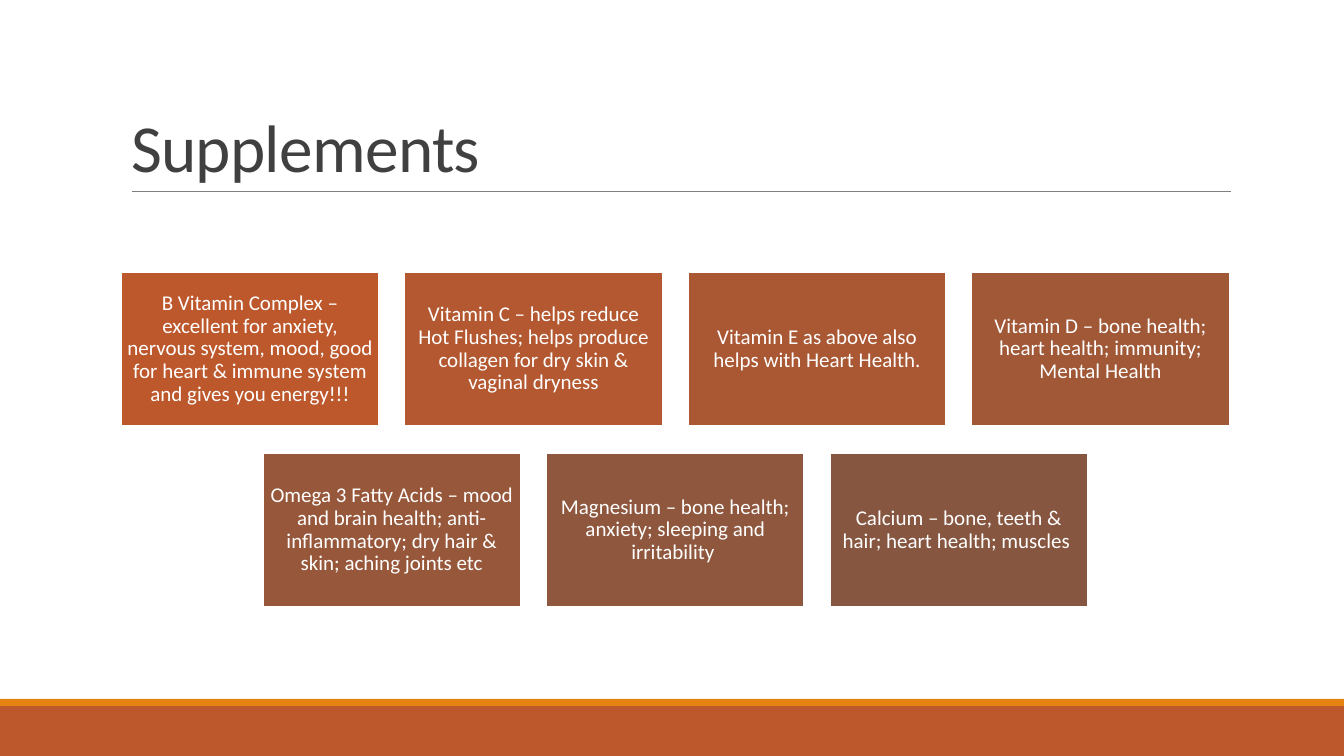
from pptx import Presentation
from pptx.dml.color import RGBColor
from pptx.enum.shapes import MSO_CONNECTOR, MSO_SHAPE
from pptx.enum.text import MSO_ANCHOR, MSO_AUTO_SIZE, PP_ALIGN
from pptx.oxml.ns import qn
from pptx.util import Pt
from lxml import etree

RECT = MSO_SHAPE.RECTANGLE
STRAIGHT = MSO_CONNECTOR.STRAIGHT
LEFT, CENTER = PP_ALIGN.LEFT, PP_ALIGN.CENTER
MIDDLE, BOTTOM = MSO_ANCHOR.MIDDLE, MSO_ANCHOR.BOTTOM
NO_FIT = MSO_AUTO_SIZE.NONE

WHITE = RGBColor(0xFF, 0xFF, 0xFF)
DARK = RGBColor(0x40, 0x40, 0x40)
GREY = RGBColor(0x80, 0x80, 0x80)
RUST = RGBColor(0xBD, 0x58, 0x2C)
ORANGE = RGBColor(0xE4, 0x83, 0x12)

SCALE = 914400 / 100.8  # EMU per px
SLIDE_W, SLIDE_H = 1344, 756
CARD_W, CARD_H = 258, 154
GAP_X, GAP_Y = 25.5, 27
GRID_LEFT, GRID_TOP, COLUMNS = 121, 272, 4


def px(*lengths):
    return [round(n * SCALE) for n in lengths]


def add_rect(left, top, width, height, color):
    sp = s.shapes.add_shape(RECT, *px(left, top, width, height))
    sp.shadow.inherit = False
    sp.fill.solid()
    sp.fill.fore_color.rgb = color
    sp.line.fill.background()
    return sp


prs = Presentation()
prs.slide_width, prs.slide_height = px(SLIDE_W, SLIDE_H)
s = prs.slides.add_slide(prs.slide_layouts[5])

# Footer bands
add_rect(0, 706, SLIDE_W, 50, RUST)
add_rect(0, 699, SLIDE_W, 7, ORANGE)

# Title
title = s.shapes.title
title.left, title.top, title.width, title.height = px(121, 31, 1109, 160)
tf = title.text_frame
for name, value in {"word_wrap": True, "auto_size": NO_FIT,
                    "vertical_anchor": BOTTOM}.items():
    setattr(tf, name, value)
p = tf.paragraphs[0]
p.alignment, p.line_spacing = LEFT, 0.85
r = p.add_run()
r.text = "Supplements"
for name, value in {"name": "Calibri", "size": Pt(48)}.items():
    setattr(r.font, name, value)
r.font.color.rgb = DARK
r.font._element.set("spc", "-50")

# Rule under the title
rule = s.shapes.add_connector(STRAIGHT, *px(132, 191, 1231, 191))
rule.line.color.rgb = GREY
rule.line.width = Pt(0.5)
etree.SubElement(rule._element.spPr, qn("a:effectLst"))

# Supplement cards, each row centred
CARDS = [
    ("B Vitamin Complex – excellent for anxiety, nervous system, mood, "
     "good for heart & immune system and gives you energy!!!", RUST),
    ("Vitamin C – helps reduce Hot Flushes; helps produce collagen "
     "for dry skin & vaginal dryness", RGBColor(0xB3, 0x58, 0x30)),
    ("Vitamin E as above also helps with Heart Health.",
     RGBColor(0xAA, 0x58, 0x34)),
    ("Vitamin D – bone health; heart health; immunity; Mental Health",
     RGBColor(0xA0, 0x58, 0x37)),
    ("Omega 3 Fatty Acids – mood and brain health; anti-inflammatory; "
     "dry hair & skin; aching joints etc", RGBColor(0x97, 0x57, 0x3A)),
    ("Magnesium – bone health; anxiety; sleeping and irritability ",
     RGBColor(0x8F, 0x57, 0x3D)),
    ("Calcium – bone, teeth & hair; heart health; muscles ",
     RGBColor(0x86, 0x56, 0x40)),
]
INSET = px(6)[0]
CARD_FRAME = {"word_wrap": True, "vertical_anchor": MIDDLE,
              "margin_left": INSET, "margin_right": INSET,
              "margin_top": INSET, "margin_bottom": INSET}

for i, (text, color) in enumerate(CARDS):
    row, col = divmod(i, COLUMNS)
    in_row = min(COLUMNS, len(CARDS) - row * COLUMNS)
    column = col + (COLUMNS - in_row) / 2
    sp = add_rect(GRID_LEFT + column * (CARD_W + GAP_X),
                  GRID_TOP + row * (CARD_H + GAP_Y), CARD_W, CARD_H, color)
    sp.line.color.rgb = WHITE
    sp.line.width = Pt(1.25)
    tf = sp.text_frame
    for name, value in CARD_FRAME.items():
        setattr(tf, name, value)
    p = tf.paragraphs[0]
    p.alignment, p.line_spacing = CENTER, 0.9
    r = p.add_run()
    r.text = text
    for name, value in {"name": "Calibri", "size": Pt(15)}.items():
        setattr(r.font, name, value)
    r.font.color.rgb = WHITE

prs.save("out.pptx")
